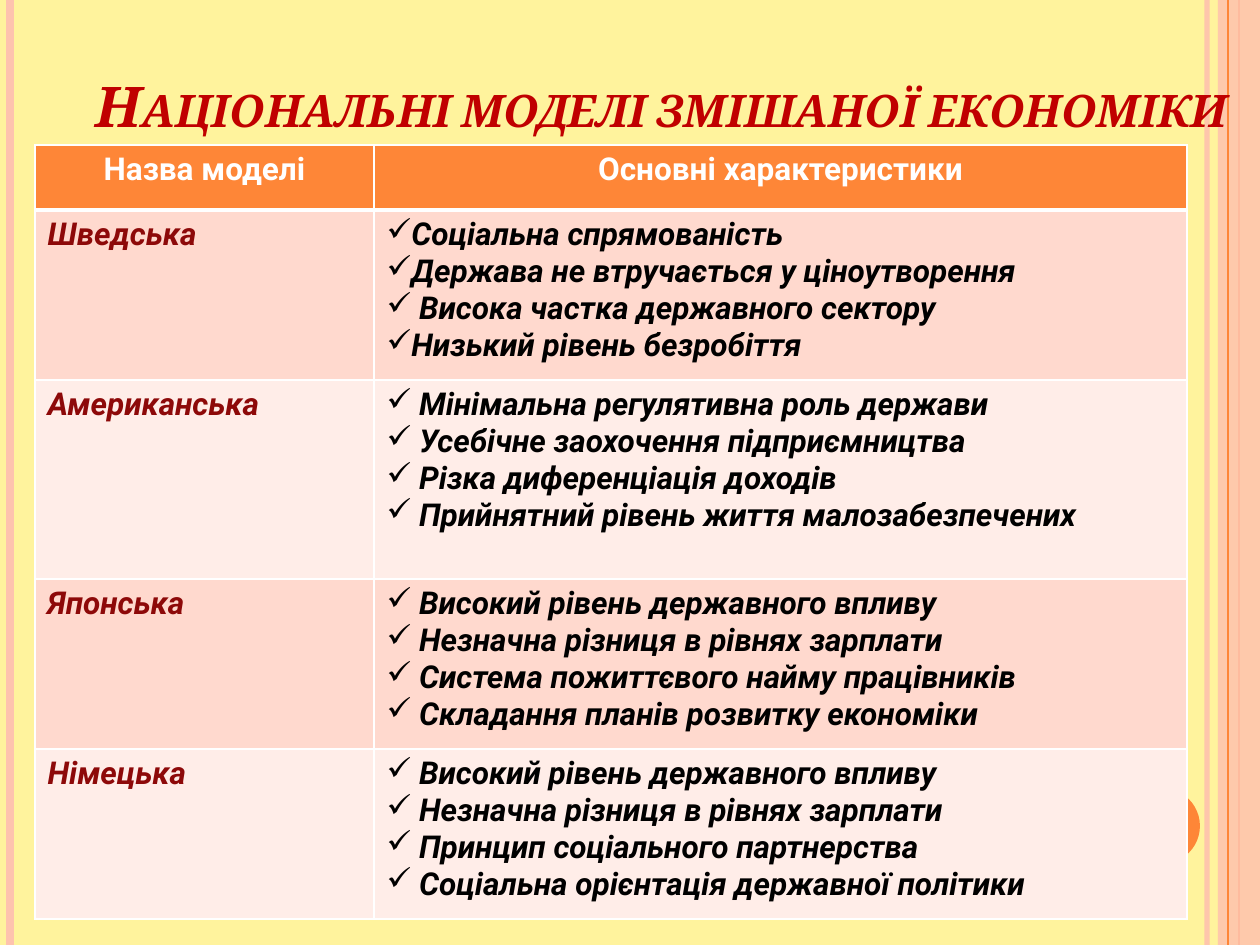
from dataclasses import dataclass
from typing import Optional

from lxml import etree
from pptx import Presentation
from pptx.dml.color import RGBColor
from pptx.enum import shapes, text
from pptx.oxml import ns
from pptx.util import Emu, Pt

EMU_PER_PX = 914400 / 126
SLIDE_W, SLIDE_H = 1260, 945

CREAM = RGBColor(0xFF, 0xF3, 0x9D)
PEACH = RGBColor(0xFE, 0xC3, 0xAE)
ORANGE = RGBColor(0xFE, 0x86, 0x37)
RED = RGBColor(0xC0, 0x00, 0x00)
MAROON = RGBColor(0x8D, 0x09, 0x09)
WHITE = RGBColor(0xFF, 0xFF, 0xFF)
BLACK = RGBColor(0x00, 0x00, 0x00)
BANDS = (RGBColor(0xFF, 0xD9, 0xCE), RGBColor(0xFF, 0xED, 0xE8))

TITLE = "Національні моделі змішаної економіки"
HEADINGS = ("Назва моделі", "Основні характеристики")
COLUMN_WIDTHS = (339, 813)
HEADING_HEIGHT = 65


@dataclass(frozen=True)
class Stripe:
    x: int
    color: RGBColor
    width: float
    opacity: int = 100


@dataclass(frozen=True)
class Model:
    name: str
    height: int
    traits: tuple[str, ...]


STRIPES = (
    Stripe(1207, PEACH, 3, 93),
    Stripe(10, PEACH, 4.5),
    Stripe(1239, ORANGE, 1.5),
)
EDGE_STRIPE = Stripe(1228, ORANGE, 0.75)

MODELS = (
    Model("Шведська", 170, (
        "Соціальна спрямованість",
        "Держава не втручається у ціноутворення",
        " Висока частка державного сектору",
        "Низький рівень безробіття",
    )),
    Model("Американська", 199, (
        " Мінімальна регулятивна роль держави",
        " Усебічне заохочення підприємництва",
        " Різка диференціація доходів",
        " Прийнятний рівень життя малозабезпечених",
    )),
    Model("Японська", 170, (
        " Високий рівень державного впливу",
        " Незначна різниця в рівнях зарплати",
        " Система пожиттєвого найму працівників",
        " Складання планів розвитку економіки",
    )),
    Model("Німецька", 170, (
        " Високий рівень державного впливу",
        " Незначна різниця в рівнях зарплати",
        " Принцип соціального партнерства",
        " Соціальна орієнтація державної політики",
    )),
)


def px(length: int) -> Emu:
    return Emu(round(length * EMU_PER_PX))


def set_opacity(element, percent: int) -> None:
    if percent < 100:
        for color in element.iter(ns.qn("a:srgbClr")):
            etree.SubElement(color, ns.qn("a:alpha"), val=str(percent * 1000))


def draw_stripe(slide, stripe: Stripe) -> None:
    line = slide.shapes.add_connector(
        shapes.MSO_CONNECTOR.STRAIGHT, px(stripe.x), 0, px(stripe.x), px(SLIDE_H))
    line.line.color.rgb = stripe.color
    line.line.width = Pt(stripe.width)
    properties = line.line._get_or_add_ln().getparent()
    set_opacity(properties, stripe.opacity)
    etree.SubElement(properties, ns.qn("a:effectLst"))


def draw_solid(slide, kind, box: tuple[int, int, int, int],
               color: RGBColor, opacity: int = 100) -> None:
    solid = slide.shapes.add_shape(kind, *map(px, box))
    solid.shadow.inherit = False
    solid.fill.solid()
    solid.fill.fore_color.rgb = color
    solid.line.fill.background()
    set_opacity(solid.fill._xPr, opacity)


def write(frame, *lines: str, color: RGBColor, size: int = 18, font: str = "Roboto",
          italic: bool = True, small_caps: bool = False,
          align=text.PP_ALIGN.LEFT, bullet: Optional[str] = None) -> None:
    """Fill a text frame with one bold paragraph per line."""
    for index, line in enumerate(lines):
        paragraph = frame.paragraphs[0] if index == 0 else frame.add_paragraph()
        paragraph.alignment = align
        if bullet:
            properties = paragraph._p.get_or_add_pPr()
            properties.set("marL", "0")
            properties.set("indent", "0")
            etree.SubElement(properties, ns.qn("a:buChar"), char=bullet)
        run = paragraph.add_run()
        run.text = line
        run.font.name = font
        run.font.size = Pt(size)
        run.font.bold = True
        run.font.italic = italic
        run.font.color.rgb = color
        if small_caps:
            run.font._element.set("cap", "small")


def style_cell(cell, fill: RGBColor, top: int = 1, bottom: int = 1) -> None:
    """Set the fill and the white borders, with widths in points."""
    cell.fill.solid()
    cell.fill.fore_color.rgb = fill
    properties = cell._tc.get_or_add_tcPr()
    widths = {"lnL": 1, "lnR": 1, "lnT": top, "lnB": bottom}
    for index, (side, width) in enumerate(widths.items()):
        border = etree.Element(ns.qn(f"a:{side}"), w=str(Pt(width)))
        paint = etree.SubElement(border, ns.qn("a:solidFill"))
        etree.SubElement(paint, ns.qn("a:srgbClr"), val=str(WHITE))
        properties.insert(index, border)


def draw_models(slide) -> None:
    heights = (HEADING_HEIGHT, *(model.height for model in MODELS))
    table = slide.shapes.add_table(
        len(heights), len(COLUMN_WIDTHS), px(35), px(145),
        px(sum(COLUMN_WIDTHS)), px(sum(heights))).table
    table.first_row = table.horz_banding = False
    for column, width in zip(table.columns, COLUMN_WIDTHS):
        column.width = px(width)
    for row, height in zip(table.rows, heights):
        row.height = px(height)

    for column, heading in enumerate(HEADINGS):
        cell = table.cell(0, column)
        style_cell(cell, ORANGE, bottom=3)
        write(cell.text_frame, heading, color=WHITE, italic=False,
              align=text.PP_ALIGN.CENTER)
    for row, model in enumerate(MODELS, start=1):
        name, traits = table.cell(row, 0), table.cell(row, 1)
        for cell in (name, traits):
            style_cell(cell, BANDS[(row - 1) % 2], top=3 if row == 1 else 1)
        write(name.text_frame, model.name, color=MAROON)
        write(traits.text_frame, *model.traits, color=BLACK, bullet="✓")


def main() -> None:
    deck = Presentation()
    deck.slide_width, deck.slide_height = px(SLIDE_W), px(SLIDE_H)
    slide = deck.slides.add_slide(deck.slide_layouts[6])
    slide.background.fill.solid()
    slide.background.fill.fore_color.rgb = CREAM

    for stripe in STRIPES:
        draw_stripe(slide, stripe)
    draw_solid(slide, shapes.MSO_SHAPE.RECTANGLE, (1218, 0, 42, SLIDE_H), PEACH, 87)
    draw_stripe(slide, EDGE_STRIPE)
    draw_solid(slide, shapes.MSO_SHAPE.OVAL, (1124, 788, 76, 76), ORANGE)

    title = slide.shapes.add_textbox(*map(px, (63, 0, 1197, 145))).text_frame
    title.word_wrap = True
    title.vertical_anchor = text.MSO_ANCHOR.BOTTOM
    write(title, TITLE, color=RED, size=32, font="Cambria", small_caps=True,
          align=text.PP_ALIGN.CENTER)
    draw_models(slide)
    deck.save("out.pptx")


if __name__ == "__main__":
    main()
